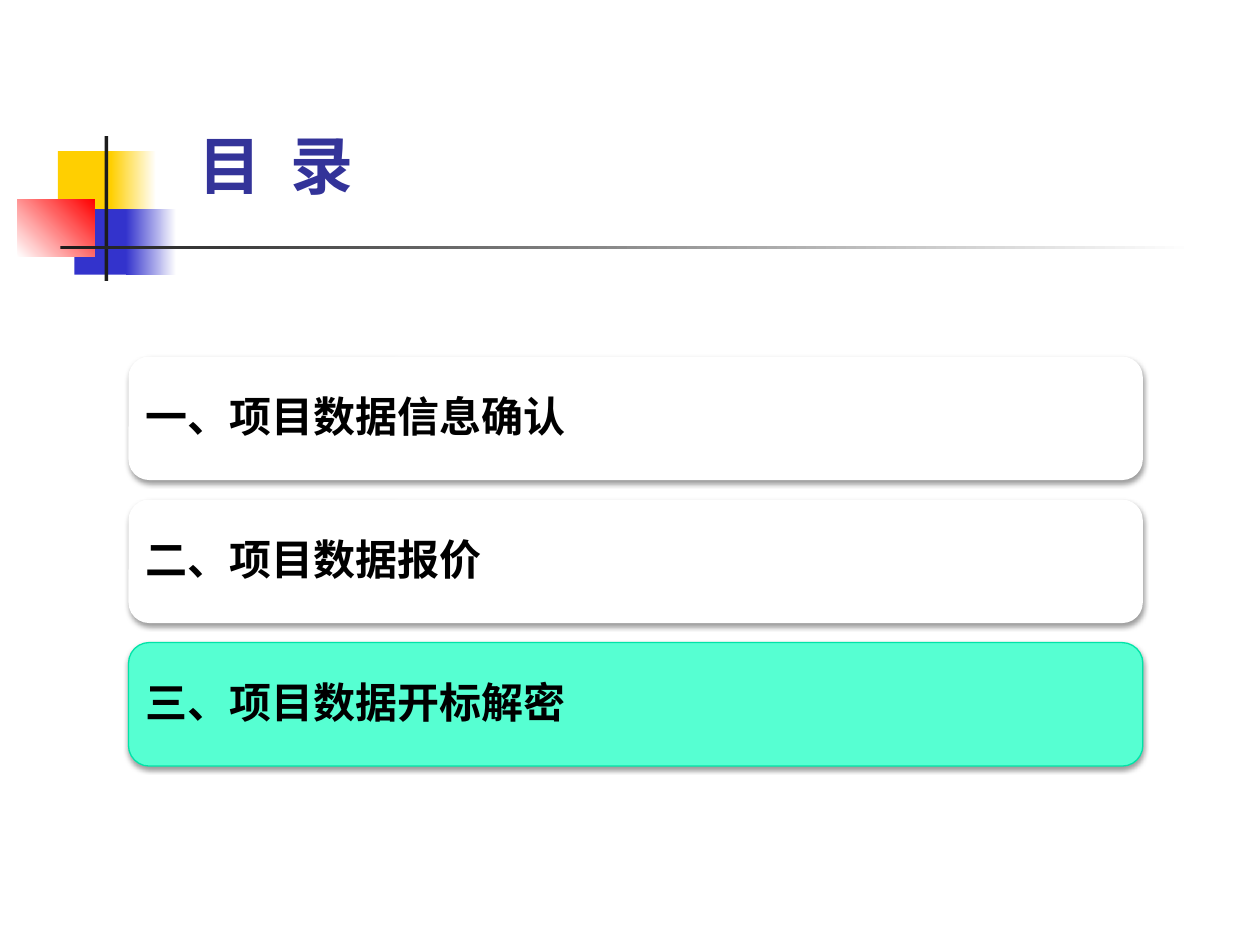
"""Build a contents slide with a block ornament and three agenda cards."""
import pptx
import pptx.dml.color
import pptx.enum.shapes
import pptx.enum.text
import pptx.oxml.ns
import pptx.util
from lxml import etree

Inches = pptx.util.Inches
Pt = pptx.util.Pt
qn = pptx.oxml.ns.qn
SHAPE = pptx.enum.shapes.MSO_SHAPE
COLORS = {
    "yellow": "FFCF01", "blue": "3333CC", "red": "FF0000", "ink": "1C1C1C",
    "white": "FFFFFF", "black": "000000", "title": "333399",
    "mint": "56FFD2", "mint_edge": "00E4A8",
}


def rgb(name):
    return pptx.dml.color.RGBColor.from_string(COLORS[name])


def add_text(box, words, size, latin, color, margin):
    textbox = slide.shapes.add_textbox(*map(Inches, box))
    frame = textbox.text_frame
    frame.word_wrap = True
    frame.vertical_anchor = pptx.enum.text.MSO_ANCHOR.MIDDLE
    frame.margin_left = frame.margin_right = Inches(0.1)
    frame.margin_top = frame.margin_bottom = Inches(margin)
    paragraph = frame.paragraphs[0]
    paragraph.text = words
    paragraph.font.size = Pt(size)
    paragraph.font.bold = True
    paragraph.font.name = latin
    paragraph.font.color.rgb = rgb(color)
    latin_tag = next(paragraph._p.iter(qn("a:latin")))
    east_asian = etree.Element(qn("a:ea"), typeface="Noto Sans CJK SC")
    latin_tag.addnext(east_asian)
    return paragraph


deck = pptx.Presentation()
deck.slide_width, deck.slide_height = Inches(10), Inches(7.5)
slide = deck.slides.add_slide(deck.slide_layouts[6])

ornament = [
    ((0.46, 1.2, 0.48, 0.52), ["yellow"], 0),
    ((0.88, 1.2, 0.36, 0.52), ["yellow", "white"], 0),
    ((0.59, 1.66, 0.46, 0.52), ["blue"], 0),
    ((1, 1.66, 0.4, 0.52), ["blue", "white"], 0),
    ((0.14, 1.58, 0.61, 0.46), ["white", "red"], 45),
    ((0.83, 1.08, 0.03, 1.15), ["ink"], 0),
    ((0.48, 1.95, 9, 0.03), ["ink", "white"], 0),
]
for box, tones, angle in ornament:
    block = slide.shapes.add_shape(SHAPE.RECTANGLE, *map(Inches, box))
    block.shadow.inherit = False
    block.line.fill.background()
    if len(tones) == 1:
        block.fill.solid()
        block.fill.fore_color.rgb = rgb(tones[0])
    else:
        block.fill.gradient()
        block.fill.gradient_angle = angle
        for stop, tone in zip(block.fill.gradient_stops, tones):
            stop.color.rgb = rgb(tone)

add_text((1.48, 0.68, 8.05, 1.25), "目  录", 36, "Noto Sans CJK SC", "title", 0.05)

agenda = [
    ("一、项目数据信息确认", "white", None),
    ("二、项目数据报价", "white", None),
    ("三、项目数据开标解密", "mint", "mint_edge"),
]
for index, (topic, fill, edge) in enumerate(agenda):
    top = 2.83 + index * 1.135
    card = slide.shapes.add_shape(
        SHAPE.ROUNDED_RECTANGLE, Inches(1.02), Inches(top), Inches(8.05), Inches(0.98))
    card.fill.solid()
    card.fill.fore_color.rgb = rgb(fill)
    if edge:
        card.line.color.rgb = rgb(edge)
        card.line.width = Pt(0.75)
    else:
        card.line.fill.background()
    card.shadow.inherit = False
    effects = card._element.spPr.find(qn("a:effectLst"))
    shadow = etree.SubElement(
        effects, qn("a:outerShdw"), blurRad=str(Pt(3.1)), dist=str(Pt(1.6)),
        dir="5400000", rotWithShape="0")
    shade = etree.SubElement(shadow, qn("a:srgbClr"), val=COLORS["black"])
    etree.SubElement(shade, qn("a:alpha"), val="38000")
    label = add_text((1.06, top + 0.05, 7.95, 0.89), topic, 24, "Lato", "black", 0.1)
    label.line_spacing = 0.9
    label.space_after = Pt(8.4)

deck.save("out.pptx")
